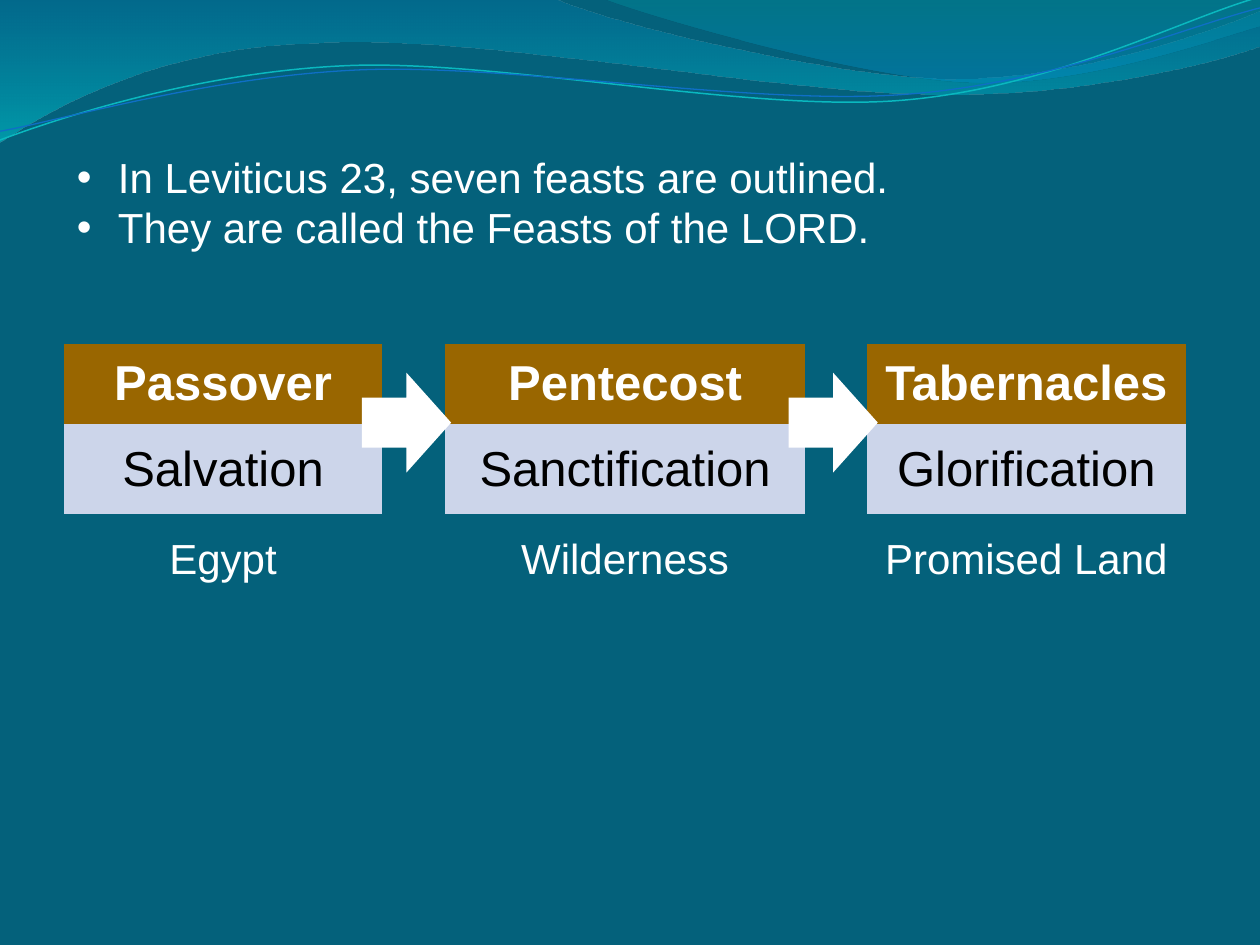
from lxml.etree import SubElement
from pptx import Presentation
from pptx.dml.color import RGBColor
from pptx.enum.shapes import MSO_SHAPE
from pptx.enum.text import MSO_ANCHOR, MSO_AUTO_SIZE, PP_ALIGN
from pptx.oxml.ns import qn
from pptx.util import Pt

BULLETS = ["In Leviticus 23, seven feasts are outlined.",
           "They are called the Feasts of the LORD."]
FEASTS = [("Passover", "Salvation", "Egypt"),
          ("Pentecost", "Sanctification", "Wilderness"),
          ("Tabernacles", "Glorification", "Promised Land")]
ROW_STYLES = [dict(size=28, color="FFFFFF", bold=True),
              dict(size=28, color="000000"),
              dict(size=24, color="FFFFFF")]
ROW_FILLS = ["996600", "CCD5EA", None]
COLUMN_WIDTHS = [181.5, 36, 206, 35.3, 182]
ROW_HEIGHTS = [45.8, 51.8, 51.8, 51.8]
LEFT, TABLE_TOP = 36.7, 196.4
ARROW_LEFTS = [206.8, 450.6]
PLAIN_TABLE_STYLE = "{2D5ABB26-0587-4C30-8999-92F81FD0307C}"

WAVES = [
    ([(0, 0), (317, -0.7), (343, 12, 478, 45, 546, 45), (614, 45, 690, 19, 720, 6.5),
      (720.7, 26), (708, 32, 626, 55, 537, 54), (447, 54, 275, 20, 185, 24.5),
      (93, 26, 33, 60, -0.7, 81.5)],
     [(0, "0074A1", 45), (1, "00C6CF", 55)]),
    ([(345, -0.7), (366, 8, 491, 45, 554, 47), (616, 50, 692, 23, 720, 15), (720, 0)],
     [(0, "00A1A9", 30), (0.8, "008BBF", 45)]),
]
STRANDS = [
    ([(0, 80), (35, 67, 114, 41, 199, 37.5), (284, 34, 427, 64, 513, 57.5),
      (600, 51, 675, 11, 719, -1.5)], "0AB8BF", 0.85),
    ([(0, 75), (34, 69, 118, 44, 204, 40), (290, 36, 430, 60.5, 516, 54),
      (602, 48, 678, 15, 720, 4.5)], "0F6FC6", 0.75),
]


def rgb(color):
    return RGBColor.from_string(color)


def write(paragraph, text, size=24, color="FFFFFF", bold=False, align=PP_ALIGN.LEFT):
    paragraph.alignment = align
    run = paragraph.add_run()
    run.text = text
    run.font.name = "Arial"
    run.font.size = Pt(size)
    run.font.bold = bold
    run.font.color.rgb = rgb(color)


def add_outline(slide, steps, closed):
    points = [(Pt(x), Pt(y)) for step in steps for x, y in zip(step[::2], step[1::2])]
    builder = slide.shapes.build_freeform(*points[0], scale=1)
    builder.add_line_segments(points[1:], close=closed)
    shape = builder.convert_to_shape()
    shape.shadow.inherit = False
    segments = iter(list(shape.element.iter(qn("a:lnTo"))))
    for step in steps[1:]:
        segment = next(segments)
        if len(step) == 6:
            segment.tag = qn("a:cubicBezTo")
            for extra in (next(segments), next(segments)):
                segment.append(extra[0])
                extra.getparent().remove(extra)
    return shape


def add_wave(slide, steps, stops):
    shape = add_outline(slide, steps, True)
    shape.line.fill.background()
    shape.fill.gradient()
    shape.fill.gradient_angle = 270
    for stop, (position, color, opacity) in zip(shape.fill.gradient_stops, stops):
        stop.position = position
        stop.color.rgb = rgb(color)
    colors = shape.element.spPr.iter(qn("a:srgbClr"))
    for element, (position, color, opacity) in zip(colors, stops):
        SubElement(element, qn("a:alpha"), val=str(opacity * 1000))


def add_strand(slide, steps, color, width):
    shape = add_outline(slide, steps, False)
    shape.fill.background()
    shape.line.color.rgb = rgb(color)
    shape.line.width = Pt(width)


def add_feasts(slide):
    frame = slide.shapes.add_table(len(ROW_HEIGHTS), len(COLUMN_WIDTHS), Pt(LEFT), Pt(TABLE_TOP),
                                   Pt(sum(COLUMN_WIDTHS)), Pt(sum(ROW_HEIGHTS)))
    table = frame.table
    table.first_row = table.horz_banding = False
    next(frame.element.iter(qn("a:tableStyleId"))).text = PLAIN_TABLE_STYLE
    for column, width in zip(table.columns, COLUMN_WIDTHS):
        column.width = Pt(width)
    for row, height in zip(table.rows, ROW_HEIGHTS):
        row.height = Pt(height)
    for cell in table.iter_cells():
        cell.fill.background()
    for index, feast in enumerate(FEASTS):
        for row, text in enumerate(feast):
            cell = table.cell(row, 2 * index)
            cell.vertical_anchor = MSO_ANCHOR.MIDDLE
            if ROW_FILLS[row]:
                cell.fill.solid()
                cell.fill.fore_color.rgb = rgb(ROW_FILLS[row])
            write(cell.text_frame.paragraphs[0], text, align=PP_ALIGN.CENTER, **ROW_STYLES[row])


def add_arrow(slide, left):
    arrow = slide.shapes.add_shape(MSO_SHAPE.RIGHT_ARROW, Pt(left), Pt(213), Pt(51), Pt(57))
    arrow.shadow.inherit = False
    arrow.fill.solid()
    arrow.fill.fore_color.rgb = rgb("FFFFFF")
    arrow.line.fill.background()


def fill_body(body):
    body.left, body.top, body.width, body.height = Pt(LEFT), Pt(83), Pt(641), Pt(65.5)
    frame = body.text_frame
    frame.auto_size = MSO_AUTO_SIZE.NONE
    frame.vertical_anchor = MSO_ANCHOR.TOP
    for index, text in enumerate(BULLETS):
        paragraph = frame.add_paragraph() if index else frame.paragraphs[0]
        write(paragraph, text)
        paragraph.space_before = Pt(0)
        properties = paragraph._p.get_or_add_pPr()
        properties.set("marL", str(Pt(23.5)))
        properties.set("indent", str(-Pt(23.5)))
        SubElement(properties, qn("a:buFont"), typeface="Arial")
        SubElement(properties, qn("a:buChar"), char="•")


def main():
    presentation = Presentation()
    presentation.slide_width, presentation.slide_height = Pt(720), Pt(540)
    slide = presentation.slides.add_slide(presentation.slide_layouts[1])
    slide.background.fill.solid()
    slide.background.fill.fore_color.rgb = rgb("04617B")
    title = slide.shapes.title.element
    title.getparent().remove(title)
    for wave in WAVES:
        add_wave(slide, *wave)
    for strand in STRANDS:
        add_strand(slide, *strand)
    add_feasts(slide)
    for left in ARROW_LEFTS:
        add_arrow(slide, left)
    fill_body(slide.placeholders[1])
    presentation.save("out.pptx")


if __name__ == "__main__":
    main()
